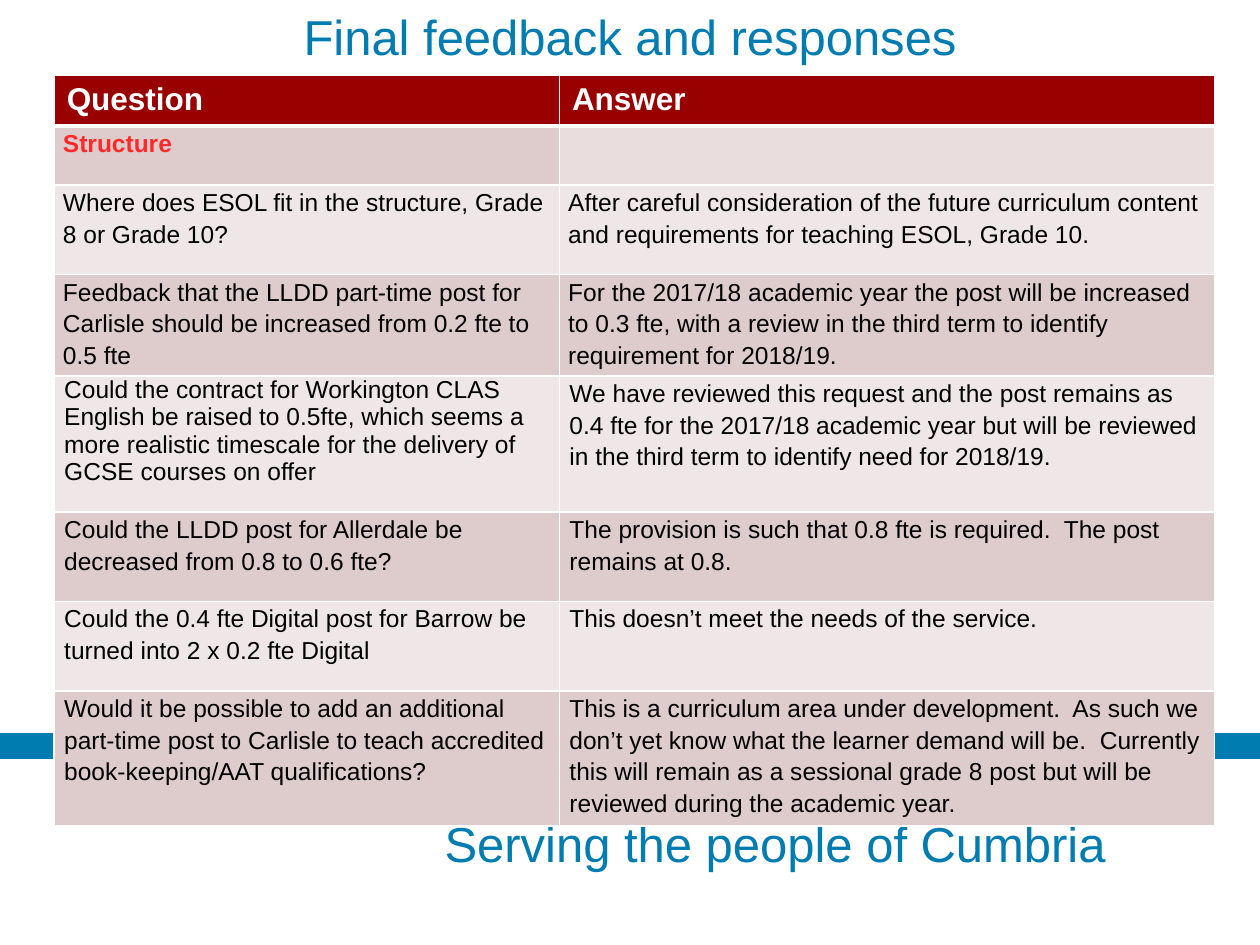
from lxml import etree
from pptx import Presentation
from pptx.dml.color import RGBColor
from pptx.enum.shapes import MSO_CONNECTOR
from pptx.enum.text import MSO_ANCHOR, PP_ALIGN
from pptx.oxml.ns import qn
from pptx.util import Inches, Pt

STRAIGHT = MSO_CONNECTOR.STRAIGHT
LEFT, CENTER = PP_ALIGN.LEFT, PP_ALIGN.CENTER
TOP, MIDDLE = MSO_ANCHOR.TOP, MSO_ANCHOR.MIDDLE

BLUE = RGBColor(0x00, 0x7C, 0xB0)
DARK_RED = RGBColor(0x99, 0x00, 0x00)
RED = RGBColor(0xFF, 0x29, 0x29)
WHITE = RGBColor(0xFF, 0xFF, 0xFF)
BLACK = RGBColor(0x00, 0x00, 0x00)
ROSE = RGBColor(0xDE, 0xCC, 0xCC)
PALE_ROSE = RGBColor(0xEF, 0xE7, 0xE7)
MID_ROSE = RGBColor(0xEA, 0xDD, 0xDD)

ROWS = [
    ("Question", "Answer"),
    ("Structure", ""),
    ("Where does ESOL fit in the structure, Grade 8 or Grade 10?",
     "After careful consideration of the future curriculum content and "
     "requirements for teaching ESOL, Grade 10."),
    ("Feedback that the LLDD part-time post for Carlisle should be increased "
     "from 0.2 fte to 0.5 fte",
     "For the 2017/18 academic year the post will be increased to 0.3 fte, "
     "with a review in the third term to identify requirement for 2018/19."),
    ("Could the contract for Workington CLAS English be raised to 0.5fte, which "
     "seems a more realistic timescale for the delivery of GCSE courses on offer",
     "We have reviewed this request and the post remains as 0.4 fte for the "
     "2017/18 academic year but will be reviewed in the third term to identify "
     "need for 2018/19."),
    ("Could the LLDD post for Allerdale be decreased from 0.8 to 0.6 fte?",
     "The provision is such that 0.8 fte is required.  The post remains at 0.8."),
    ("Could the 0.4 fte Digital post for Barrow be turned into 2 x 0.2 fte Digital",
     "This doesn’t meet the needs of the service."),
    ("Would it be possible to add an additional part-time post to Carlisle to "
     "teach accredited book-keeping/AAT qualifications?",
     "This is a curriculum area under development.  As such we don’t yet know "
     "what the learner demand will be.  Currently this will remain as a "
     "sessional grade 8 post but will be reviewed during the academic year."),
]
COLUMN_WIDTHS = [4.01, 5.2]
ROW_HEIGHTS = [0.4, 0.47, 0.71, 0.8, 1.08, 0.71, 0.71, 1.07]
SINGLE_SPACED_CELL = (4, 0)


def write_text(frame, text, size=14, color=BLACK, bold=False, align=LEFT,
               line_spacing=None):
    frame.word_wrap = True
    paragraph = frame.paragraphs[0]
    paragraph.alignment = align
    paragraph.line_spacing = line_spacing
    run = paragraph.add_run()
    run.text = text
    run.font.name = "Arial"
    run.font.size = Pt(size)
    run.font.bold = bold
    run.font.color.rgb = color


def set_borders(cell, color, **widths):
    """Draw cell borders; widths maps L, R, T and B, in that order, to points."""
    properties = cell._tc.get_or_add_tcPr()
    for side, width in widths.items():
        line = etree.SubElement(properties, qn(f"a:ln{side}"), w=str(Pt(width)))
        fill = etree.SubElement(line, qn("a:solidFill"))
        etree.SubElement(fill, qn("a:srgbClr"), val=str(color))


presentation = Presentation()
presentation.slide_width = Inches(10)
presentation.slide_height = Inches(7.5)
slide = presentation.slides.add_slide(presentation.slide_layouts[6])

# Footer band and motto
band = slide.shapes.add_connector(
    STRAIGHT, Inches(10), Inches(5.92), Inches(0), Inches(5.92))
band.line.color.rgb = BLUE
band.line.width = Pt(15)
etree.SubElement(band._element.spPr, qn("a:effectLst"))

# Motto and title
for text, left, top, width, height, align, anchor in [
    ("Serving the people of Cumbria", 3.43, 6.41, 5.91, 0.57, LEFT, TOP),
    ("Final feedback and responses", 0.75, 0.05, 8.5, 0.47, CENTER, MIDDLE),
]:
    box = slide.shapes.add_textbox(
        Inches(left), Inches(top), Inches(width), Inches(height))
    box.text_frame.vertical_anchor = anchor
    write_text(box.text_frame, text, size=28, color=BLUE, align=align)

# Question and answer table
table = slide.shapes.add_table(
    len(ROWS), len(COLUMN_WIDTHS), Inches(0.43), Inches(0.6),
    Inches(sum(COLUMN_WIDTHS)), Inches(sum(ROW_HEIGHTS))).table
for column, width in zip(table.columns, COLUMN_WIDTHS):
    column.width = Inches(width)
for row, height in zip(table.rows, ROW_HEIGHTS):
    row.height = Inches(height)

for row_index, texts in enumerate(ROWS):
    is_header = row_index == 0
    is_section = row_index == 1
    if is_header:
        row_fill, side_margin, end_margin = DARK_RED, 0.1, 0.05
    else:
        row_fill = ROSE if row_index % 2 else PALE_ROSE
        side_margin, end_margin = (0.07 if row_index < 4 else 0.08), 0
    for column_index, text in enumerate(texts):
        cell = table.cell(row_index, column_index)
        cell.margin_left = cell.margin_right = Inches(side_margin)
        cell.margin_top = cell.margin_bottom = Inches(end_margin)
        set_borders(cell, WHITE, L=1, R=1, T=3 if is_section else 1,
                    B=3 if is_header else 1)
        cell.fill.solid()
        cell.fill.fore_color.rgb = row_fill if text else MID_ROSE
        if not text:
            continue
        if is_header:
            write_text(cell.text_frame, text, size=18, color=WHITE, bold=True)
        else:
            single = (row_index, column_index) == SINGLE_SPACED_CELL
            write_text(cell.text_frame, text, color=RED if is_section else BLACK,
                       bold=is_section, line_spacing=None if single else 1.15)

presentation.save("out.pptx")
